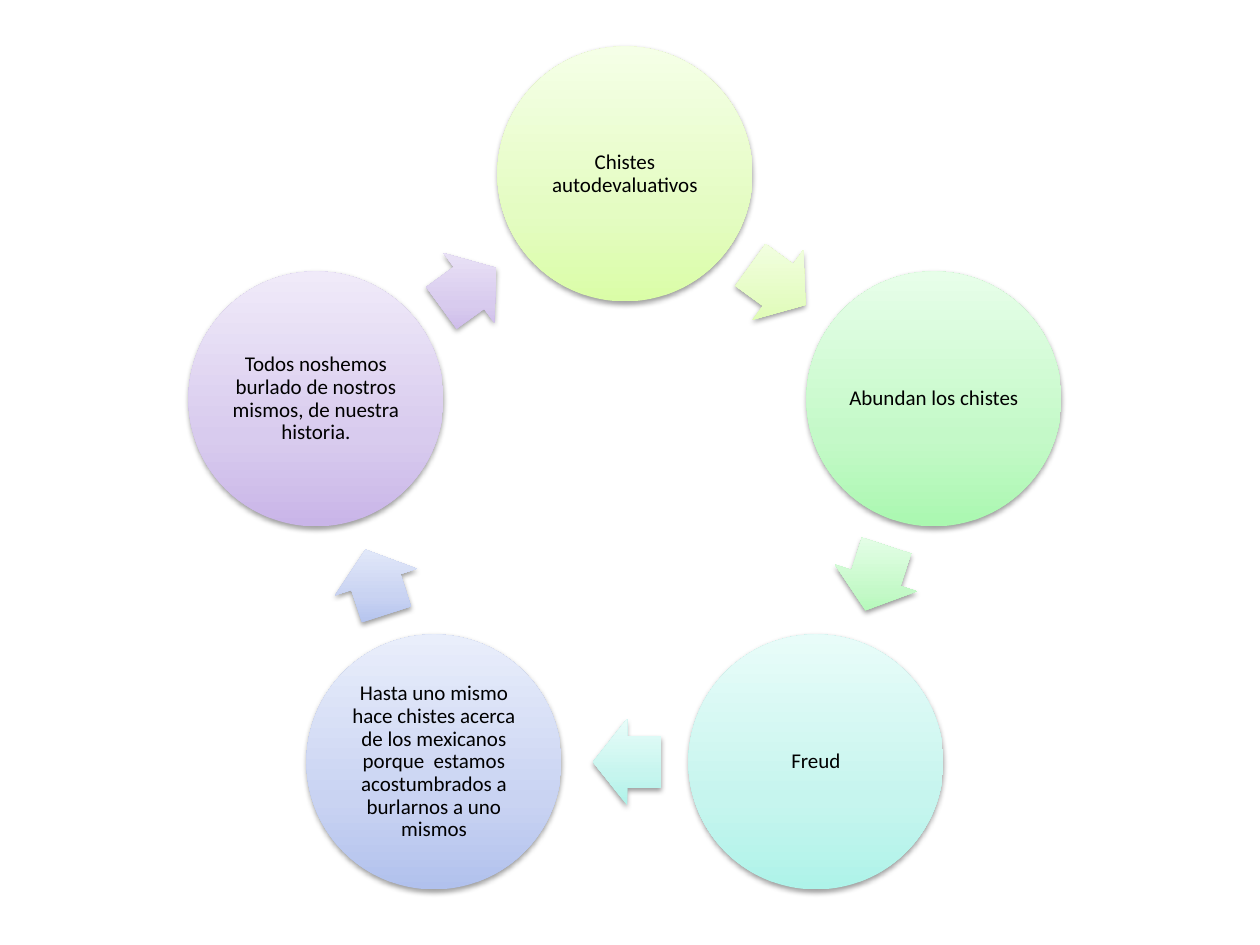
from copy import deepcopy
from math import cos, radians, sin

from lxml.etree import SubElement
from pptx import Presentation
from pptx.dml.color import RGBColor
from pptx.enum.shapes import MSO_SHAPE
from pptx.enum.text import MSO_ANCHOR, PP_ALIGN
from pptx.oxml.ns import qn
from pptx.util import Emu, Pt

PX_PER_INCH = 126
WIDTH, HEIGHT = 1260, 945
CENTER_X, CENTER_Y = 625, 499
STEP = 72
CIRCLE_ORBIT, CIRCLE_SIZE = 325, 255
ARROW_ORBIT, ARROW_LENGTH, ARROW_BREADTH = 263, 68, 86
ARROW_LAG = 0.5  # degrees by which each arrow sits before the midpoint

STAGES = [
    ("Chistes autodevaluativos", ("DAFDA7", "E4FCC2", "F5FFE7")),
    ("Abundan los chistes", ("AAF8B0", "C4F9C8", "E7FEE9")),
    ("Freud", ("AEF3E9", "C6F5EE", "E8FCF9")),
    ("Hasta uno mismo hace chistes acerca de los mexicanos porque  estamos "
     "acostumbrados a burlarnos a uno mismos", ("B1C1ED", "C9D3F2", "E9EEFB")),
    ("Todos noshemos burlado de nostros mismos, de nuestra historia.",
     ("C9B5E8", "D8CBEE", "F0EAF9")),
]


def px(length):
    return Emu(round(length * 914400 / PX_PER_INCH))


def color(hex_value):
    return RGBColor.from_string(hex_value)


def orbit_point(radius, angle):
    """Point on the cycle, with the angle in degrees clockwise from the top."""
    turn = radians(angle)
    return round(CENTER_X + radius * sin(turn)), round(CENTER_Y - radius * cos(turn))


class CycleSlide:
    font_name = "Calibri"
    font_size = 12
    text_color = "000000"
    stop_positions = (0, 0.35, 1)

    def __init__(self, slide):
        self.slide = slide

    def add_centered_shape(self, kind, center, width, height, colors):
        x, y = center
        shape = self.slide.shapes.add_shape(
            kind, px(x - width / 2), px(y - height / 2), px(width), px(height))
        shape.line.fill.background()
        self.set_gradient(shape, colors)
        self.set_shadow(shape)
        return shape

    def set_gradient(self, shape, colors):
        """Three stops from bottom to top, upright even in a rotated shape."""
        shape.fill.gradient()
        shape.fill.gradient_angle = 90
        gradient = shape._element.spPr.find(qn("a:gradFill"))
        gradient.set("rotWithShape", "0")
        stop_list = gradient.find(qn("a:gsLst"))
        stop_list.append(deepcopy(stop_list[0]))
        for stop, position, hex_value in zip(
                shape.fill.gradient_stops, self.stop_positions, colors):
            stop.position = position
            stop.color.rgb = color(hex_value)

    def set_shadow(self, shape):
        shape.shadow.inherit = False
        effects = shape._element.spPr.find(qn("a:effectLst"))
        shadow = SubElement(effects, qn("a:outerShdw"), blurRad=str(Pt(3.1)),
                            dist=str(Pt(1.6)), dir="5400000", rotWithShape="0")
        black = SubElement(shadow, qn("a:srgbClr"), val="000000")
        SubElement(black, qn("a:alpha"), val="38000")

    def add_circle(self, center, text, colors):
        circle = self.add_centered_shape(
            MSO_SHAPE.OVAL, center, CIRCLE_SIZE, CIRCLE_SIZE, colors)
        frame = circle.text_frame
        frame.word_wrap = True
        frame.vertical_anchor = MSO_ANCHOR.MIDDLE
        frame.margin_left = frame.margin_right = px(2)
        frame.margin_top = frame.margin_bottom = px(2)
        paragraph = frame.paragraphs[0]
        paragraph.text = text
        paragraph.alignment = PP_ALIGN.CENTER
        paragraph.line_spacing = 0.9
        paragraph.font.name = self.font_name
        paragraph.font.size = Pt(self.font_size)
        paragraph.font.color.rgb = color(self.text_color)

    def add_arrow(self, center, rotation, colors):
        arrow = self.add_centered_shape(
            MSO_SHAPE.RIGHT_ARROW, center, ARROW_LENGTH, ARROW_BREADTH, colors)
        arrow.adjustments[0] = 0.6
        arrow.adjustments[1] = 0.5
        arrow.rotation = rotation


def main():
    presentation = Presentation()
    presentation.slide_width, presentation.slide_height = px(WIDTH), px(HEIGHT)
    cycle = CycleSlide(presentation.slides.add_slide(presentation.slide_layouts[6]))
    for index, (text, colors) in enumerate(STAGES):
        angle = index * STEP
        midpoint = angle + STEP / 2
        cycle.add_circle(orbit_point(CIRCLE_ORBIT, angle), text, colors)
        cycle.add_arrow(orbit_point(ARROW_ORBIT, midpoint - ARROW_LAG), midpoint, colors)
    presentation.save("out.pptx")


if __name__ == "__main__":
    main()
